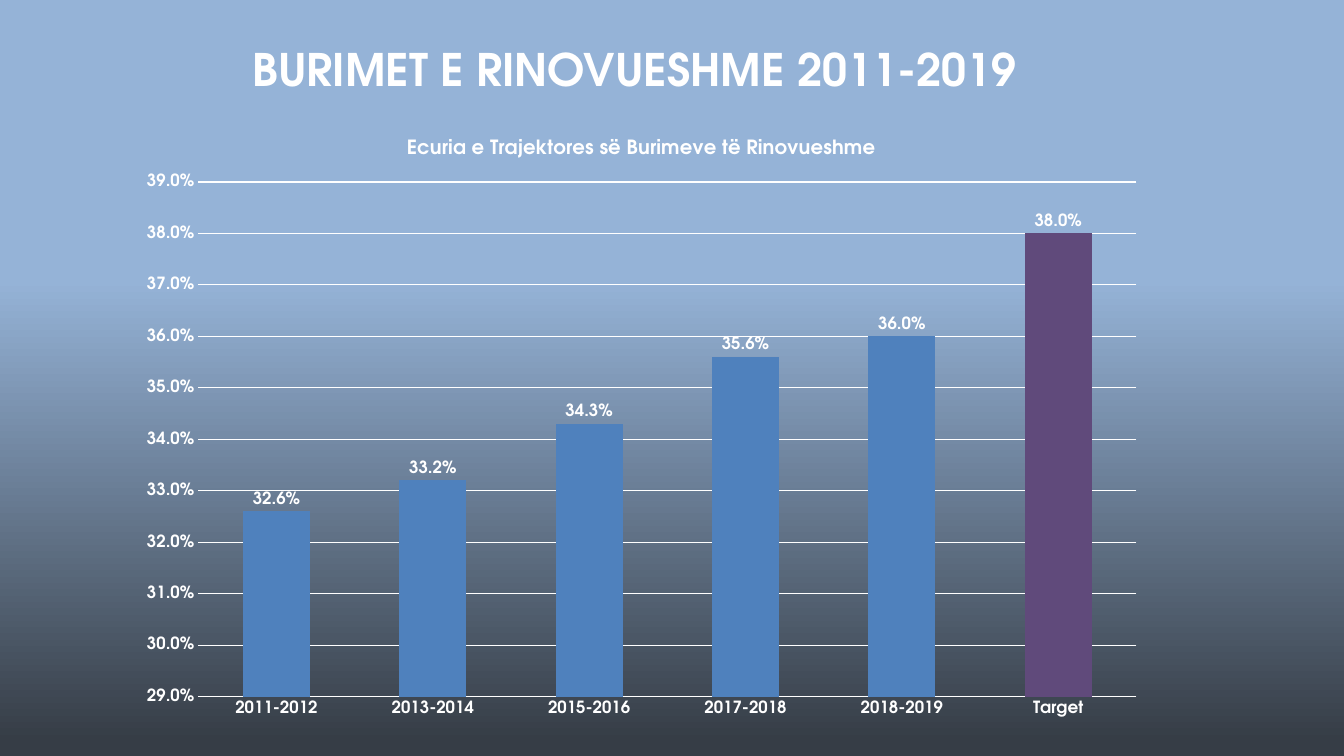
from lxml import etree
from pptx import Presentation
from pptx.chart.data import CategoryChartData
from pptx.dml.color import RGBColor
from pptx.enum.chart import XL_CHART_TYPE, XL_LABEL_POSITION, XL_TICK_MARK
from pptx.enum.text import MSO_ANCHOR, PP_ALIGN
from pptx.oxml import parse_xml
from pptx.oxml.ns import nsdecls, qn
from pptx.util import Cm, Pt

COLUMN = XL_CHART_TYPE.COLUMN_CLUSTERED
OUTSIDE = XL_LABEL_POSITION.OUTSIDE_END
NO_TICK = XL_TICK_MARK.NONE
MIDDLE = MSO_ANCHOR.MIDDLE
CENTER = PP_ALIGN.CENTER

WHITE = RGBColor(0xFF, 0xFF, 0xFF)
SKY = RGBColor(0x95, 0xB3, 0xD7)
SLATE = RGBColor(0x36, 0x3D, 0x46)
BLUE = RGBColor(0x4F, 0x81, 0xBD)
PURPLE = RGBColor(0x60, 0x4A, 0x7B)
FACE = "TeX Gyre Adventor"
PERCENT = "0.0%"


def style(font, size, bold=True):
    font.name = FACE
    font.size = Pt(size)
    font.bold = bold
    font.color.rgb = WHITE


deck = Presentation()
deck.slide_width = Cm(33.87)
deck.slide_height = Cm(19.05)
slide = deck.slides.add_slide(deck.slide_layouts[5])

# Background gradient, from sky at the top to slate at the bottom
back = slide.background.fill
back.gradient()
back.gradient_angle = 270
for stop, color, place in zip(back.gradient_stops, (SKY, SLATE), (0.37, 0.98)):
    stop.color.rgb = color
    stop.position = place

# Title with a soft shadow
title = slide.shapes.title
title.left, title.top = Cm(1.3), Cm(-0.74)
title.width, title.height = Cm(29.4), Cm(4.95)
frame = title.text_frame
frame.text = "BURIMET E RINOVUESHME 2011-2019"
frame.vertical_anchor = MIDDLE
line = frame.paragraphs[0]
line.alignment = CENTER
run = line.runs[0]
style(run.font, 32)
shadow = parse_xml(
    f'<a:effectLst {nsdecls("a")}>'
    '<a:outerShdw blurRad="38100" dist="38100" dir="2700000" algn="tl">'
    '<a:srgbClr val="000000"><a:alpha val="43000"/></a:srgbClr>'
    '</a:outerShdw></a:effectLst>')
run.font._element.find(qn("a:solidFill")).addnext(shadow)

# Chart data
data = CategoryChartData(number_format=PERCENT)
data.categories = ["2011-2012", "2013-2014", "2015-2016",
                   "2017-2018", "2018-2019", "Target"]
data.add_series("Series 1", [0.326, 0.332, 0.343, 0.356, 0.36, 0.38])
chart = slide.shapes.add_chart(
    COLUMN, Cm(3.18), Cm(2.92), Cm(25.98), Cm(15.44), data).chart
style(chart.font, 10, False)
chart.has_legend = False

# Chart title
chart.has_title = True
head = chart.chart_title.text_frame
head.text = "Ecuria e Trajektores së Burimeve të Rinovueshme"
style(head.paragraphs[0].runs[0].font, 14)
chart.chart_title.include_in_layout = False

# Columns, with the target set apart by its colour
plot = chart.plots[0]
plot.gap_width = 133
plot.overlap = -27
plot.vary_by_categories = False
bars = plot.series[0]
for part, color in ((bars, BLUE), (bars.points[5], PURPLE)):
    part.format.fill.solid()
    part.format.fill.fore_color.rgb = color

# Value labels
plot.has_data_labels = True
labels = plot.data_labels
labels.show_value = True
labels.position = OUTSIDE
labels.number_format = PERCENT
labels.number_format_is_linked = False
style(labels.font, 12)

# Axes and gridlines
years, share = chart.category_axis, chart.value_axis
for axis in (years, share):
    axis.major_tick_mark = NO_TICK
    axis.minor_tick_mark = NO_TICK
    style(axis.tick_labels.font, 12)
share.minimum_scale, share.maximum_scale = 0.29, 0.39
share.major_unit = 0.01
share.tick_labels.number_format = PERCENT
share.tick_labels.number_format_is_linked = False
share.format.line.fill.background()
share.has_major_gridlines = True
for rule in (years.format.line, share.major_gridlines.format.line):
    rule.color.rgb = WHITE
    rule.width = Pt(0.75)

# Place of the plot inside the chart
area = chart._chartSpace.chart.plotArea
for old in area.findall(qn("c:layout")):
    area.remove(old)
layout = etree.Element(qn("c:layout"))
manual = etree.SubElement(layout, qn("c:manualLayout"))
for tag, val in (("layoutTarget", "inner"), ("xMode", "edge"),
                 ("yMode", "edge"), ("x", "0.07"), ("y", "0.108"),
                 ("w", "0.91"), ("h", "0.84")):
    etree.SubElement(manual, qn(f"c:{tag}")).set("val", val)
area.insert(0, layout)

deck.save("out.pptx")
